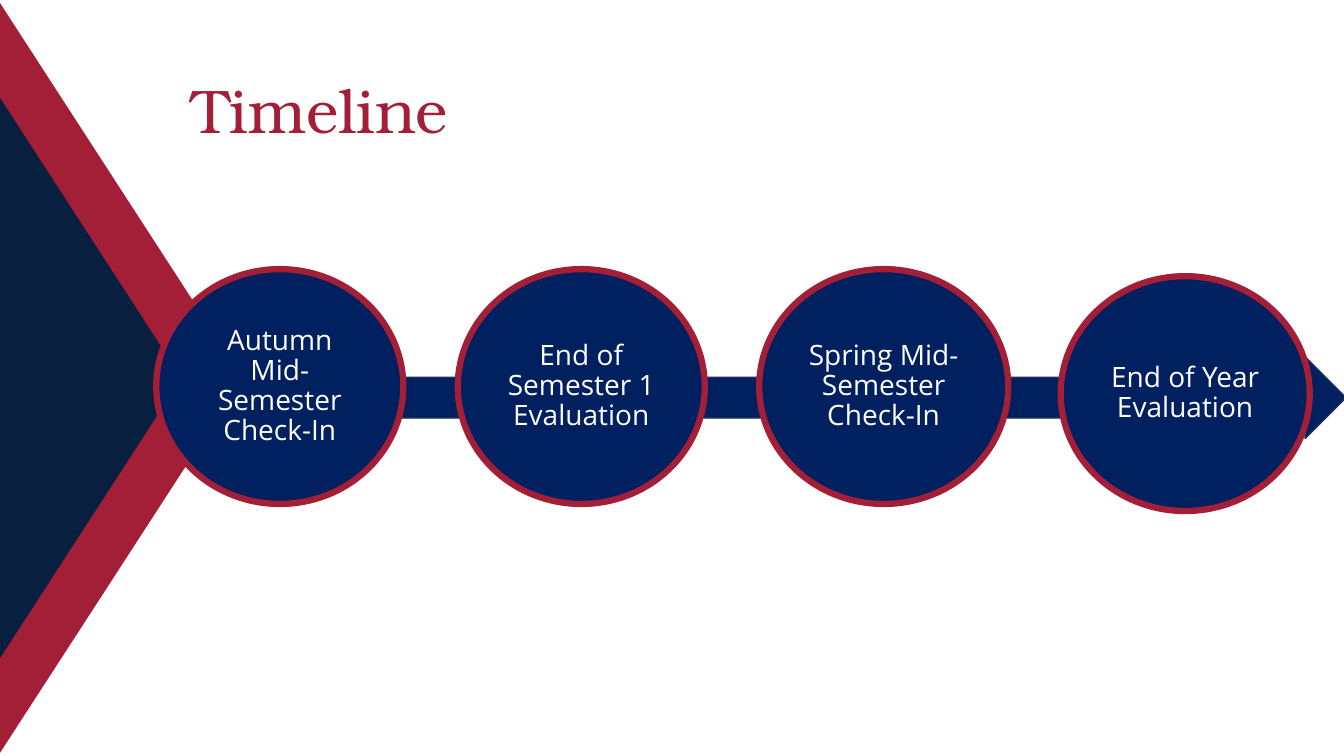
from pptx import Presentation
from pptx.dml.color import RGBColor
from pptx.enum.shapes import MSO_SHAPE
from pptx.enum.text import MSO_ANCHOR, PP_ALIGN
from pptx.util import Inches, Pt

TITLE = "Timeline"
# Paragraphs, top and width of each milestone
MILESTONES = [
    (["Autumn Mid-Semester", "Check-In"], 2.67, 2.45),
    (["End of Semester 1 Evaluation"], 2.67, 2.45),
    (["Spring Mid-Semester Check-In"], 2.67, 2.47),
    (["End of Year Evaluation"], 2.74, 2.47),
]
COLORS = {"navy": "002060", "outline": "1E3256", "crimson": "A31E37",
          "midnight": "081F40", "white": "FFFFFF"}
# Base length, depth and colour of each side triangle
TRIANGLES = [(7.5, 2.43, "crimson"), (5.62, 1.82, "midnight")]
TRIANGLE_LEFT, TRIANGLE_MIDDLE = -0.02, 3.75
FIRST_LEFT, PITCH, MILESTONE_HEIGHT = 1.55, 2.99, 2.33


def color(name):
    return RGBColor.from_string(COLORS[name])


def add_filled(slide, preset, left, top, width, height, fill, line=None, weight=0):
    shape = slide.shapes.add_shape(
        preset, Inches(left), Inches(top), Inches(width), Inches(height))
    shape.shadow.inherit = False
    shape.fill.solid()
    shape.fill.fore_color.rgb = color(fill)
    if line:
        shape.line.color.rgb = color(line)
        shape.line.width = Pt(weight)
    else:
        shape.line.fill.background()
    return shape


def style(paragraph, font_name, size, font_color):
    paragraph.line_spacing = 0.9
    paragraph.font.name = font_name
    paragraph.font.size = Pt(size)
    paragraph.font.color.rgb = color(font_color)


def main():
    prs = Presentation()
    prs.slide_width, prs.slide_height = Inches(13.33), Inches(7.5)
    slide = prs.slides.add_slide(prs.slide_layouts[5])

    # Title
    title = slide.shapes.title
    title.left, title.top = Inches(1.8), Inches(0.4)
    title.width, title.height = Inches(10.62), Inches(1.45)
    title.text_frame.text = TITLE
    title.text_frame.vertical_anchor = MSO_ANCHOR.MIDDLE
    heading = title.text_frame.paragraphs[0]
    heading.alignment = PP_ALIGN.LEFT
    style(heading, "TeX Gyre Bonum", 44, "crimson")

    # Timeline arrow
    add_filled(slide, MSO_SHAPE.RIGHT_ARROW, 0.71, 3.54, 12.64, 0.81,
               "navy", "outline", 1)

    # Side triangles, turned to point right
    for base, depth, fill in TRIANGLES:
        left = TRIANGLE_LEFT + (depth - base) / 2
        triangle = add_filled(slide, MSO_SHAPE.ISOSCELES_TRIANGLE, left,
                              TRIANGLE_MIDDLE - depth / 2, base, depth, fill)
        triangle.rotation = 90

    # Milestones
    for index, (lines, top, width) in enumerate(MILESTONES):
        milestone = add_filled(slide, MSO_SHAPE.OVAL, FIRST_LEFT + index * PITCH,
                               top, width, MILESTONE_HEIGHT, "navy", "crimson", 4.5)
        frame = milestone.text_frame
        frame.word_wrap = True
        frame.vertical_anchor = MSO_ANCHOR.MIDDLE
        frame.text = "\n".join(lines)
        for paragraph in frame.paragraphs:
            paragraph.alignment = PP_ALIGN.CENTER
            style(paragraph, "Open Sans", 20, "white")

    prs.save("out.pptx")


if __name__ == "__main__":
    main()
